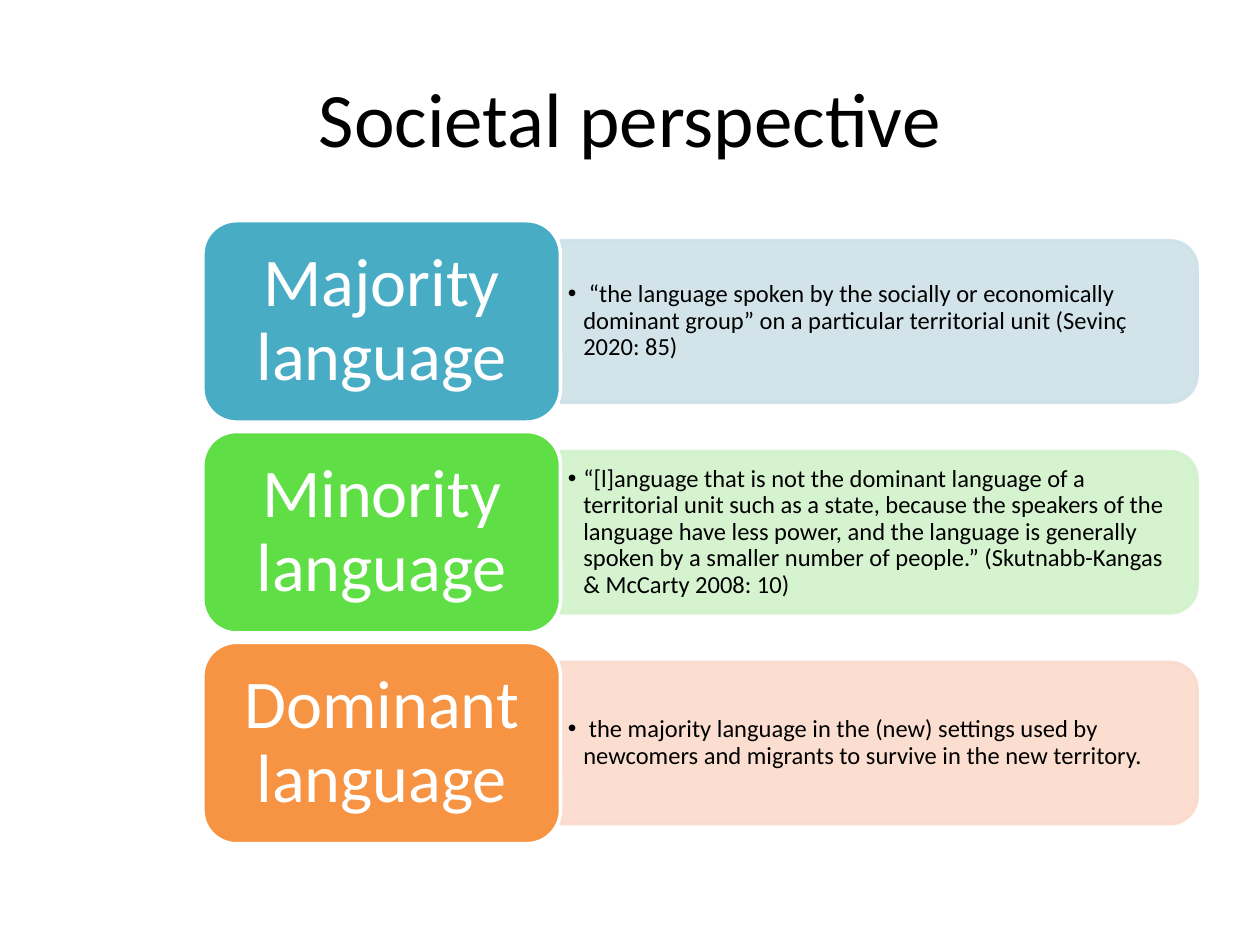
from lxml.etree import SubElement
from pptx import Presentation
from pptx.dml.color import RGBColor
from pptx.enum.shapes import MSO_SHAPE
from pptx.enum.text import MSO_ANCHOR, PP_ALIGN
from pptx.oxml.ns import qn
from pptx.util import Cm, Pt

HUES = {
    "black": "000000", "white": "FFFFFF",
    "blue": "49ACC5", "pale blue": "CDE1E8",
    "green": "5FDF45", "pale green": "D2F2CB",
    "orange": "F69444", "pale orange": "FBDACB",
}
TERMS = [
    ("Majority language", "blue",
     " “the language spoken by the socially or economically dominant group” "
     "on a particular territorial unit (Sevinç 2020: 85)"),
    ("Minority language", "green",
     "“[l]anguage that is not the dominant language of a territorial unit such as "
     "a state, because the speakers of the language have less power, and the "
     "language is generally spoken by a smaller number of people.” "
     "(Skutnabb-Kangas & McCarty 2008: 10)"),
    ("Dominant language", "orange",
     " the majority language in the (new) settings used by newcomers and "
     "migrants to survive in the new territory."),
]


def paint(shape, fill, edge):
    shape.shadow.inherit = False
    shape.fill.solid()
    shape.fill.fore_color.rgb = RGBColor.from_string(HUES[fill])
    shape.line.color.rgb = RGBColor.from_string(HUES[edge])
    shape.line.width = Pt(2)


def write(shape, text, size, hue, side, end):
    frame = shape.text_frame
    frame.word_wrap = True
    frame.vertical_anchor = MSO_ANCHOR.MIDDLE
    frame.margin_left = frame.margin_right = Cm(side)
    frame.margin_top = frame.margin_bottom = Cm(end)
    para = frame.paragraphs[0]
    para.text = text
    para.font.name = "Calibri"
    para.font.size = Pt(size)
    para.font.color.rgb = RGBColor.from_string(HUES[hue])
    return para


deck = Presentation()
deck.slide_width, deck.slide_height = Cm(25.4), Cm(19.05)
slide = deck.slides.add_slide(deck.slide_layouts[5])
shapes = slide.shapes

title = shapes.title
title.left, title.top, title.width, title.height = Cm(1.27), Cm(0.76), Cm(22.86), Cm(3.18)
write(title, "Societal perspective", 44, "black", 0.25, 0.13).alignment = PP_ALIGN.CENTER

left, wide, high = 4.09, 7.21, 4.06
split = left + wide
long, deep = 12.83, 3.25
for row, (term, hue, text) in enumerate(TERMS):
    mid = 6.48 + row * 4.25

    panel = shapes.add_shape(
        MSO_SHAPE.ROUND_2_SAME_RECTANGLE,
        Cm(split + (long - deep) / 2), Cm(mid - long / 2), Cm(deep), Cm(long))
    panel.rotation = 90
    panel.adjustments[0] = 0.167
    paint(panel, "pale " + hue, "pale " + hue)
    for tint in panel.fill._xPr.iter(qn("a:srgbClr")):
        SubElement(tint, qn("a:alpha"), val="89000")

    note = shapes.add_textbox(Cm(split), Cm(mid - 1.46), Cm(12.65), Cm(2.92))
    props = note.text_frame.paragraphs[0]._p.get_or_add_pPr()
    props.set("marL", str(Cm(0.31)))
    props.set("indent", str(Cm(-0.31)))
    SubElement(props, qn("a:buFont"), typeface="Arial")
    SubElement(props, qn("a:buChar"), char="•")
    write(note, text, 14, "black", 0.15, 0.08).line_spacing = 0.9

    label = shapes.add_shape(
        MSO_SHAPE.ROUNDED_RECTANGLE,
        Cm(left), Cm(mid - high / 2), Cm(wide), Cm(high))
    label.adjustments[0] = 0.167
    paint(label, hue, "white")
    para = write(label, term, 39, "white", 0.41, 0.2)
    para.alignment = PP_ALIGN.CENTER
    para.line_spacing = 0.9

deck.save("out.pptx")
